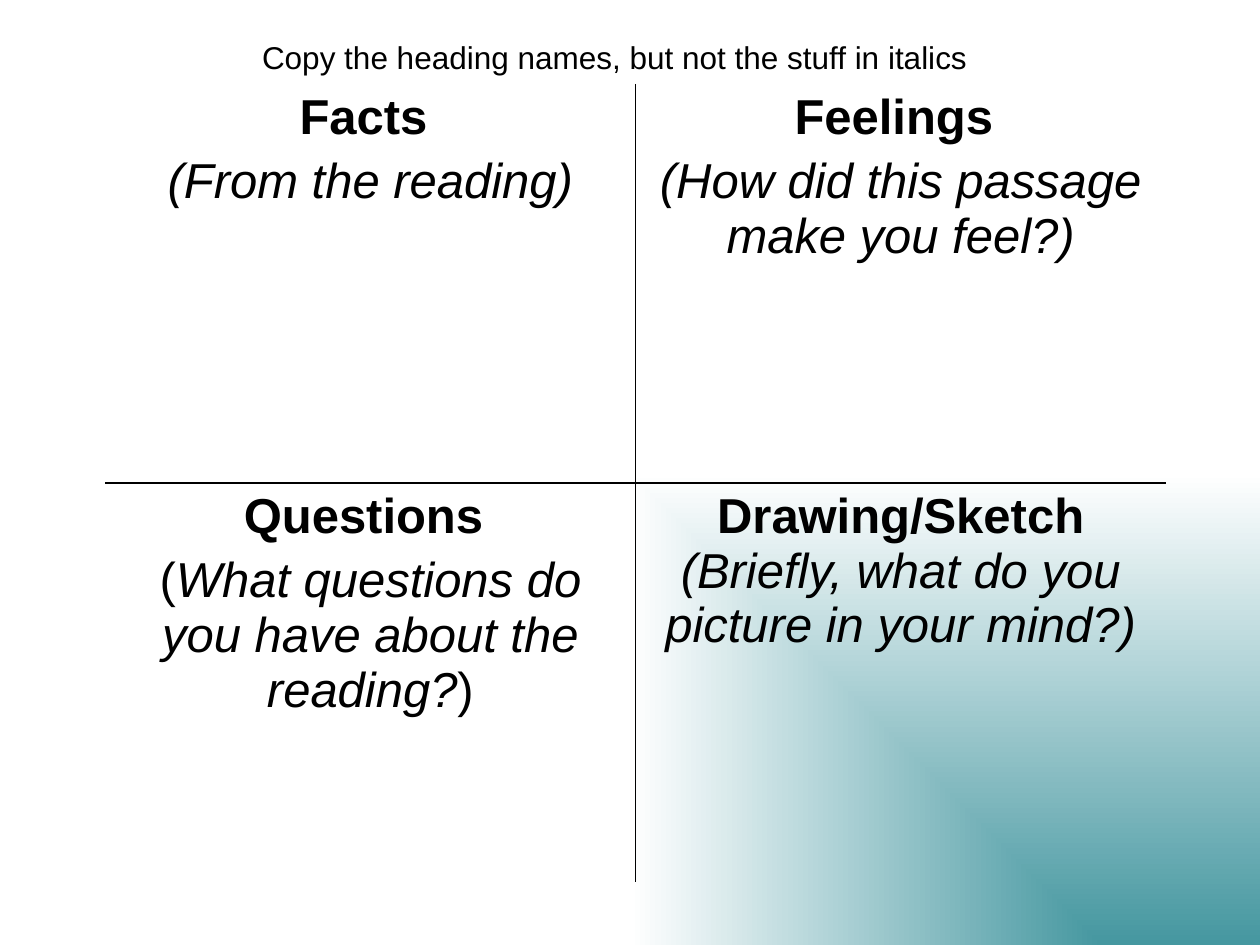
from dataclasses import dataclass

from lxml import etree
from pptx import Presentation
from pptx import util as u
from pptx.dml.color import RGBColor
from pptx.enum import text
from pptx.oxml import ns


@dataclass(frozen=True)
class Theme:
    font: str = "Arial"
    ink: str = "000000"
    teal: str = "4597A0"
    paper: str = "FFFFFF"
    caption_size: int = 18
    cell_size: int = 28
    rule_width: int = 1


THEME = Theme()
HEADING, PLAIN, HINT = {"bold": True}, {}, {"italic": True}

# Rows of cells; a cell is a list of paragraphs, a paragraph a list of runs
QUADRANTS = [
    [
        [[("Facts ", HEADING)], [("(From the reading)", HINT)]],
        [[("Feelings ", HEADING)],
         [("(How did this passage make you feel?)", HINT)]],
    ],
    [
        [[("Questions ", HEADING)],
         [("(", PLAIN),
          ("What questions do you have about the reading?", HINT),
          (")", PLAIN)]],
        [[("Drawing/Sketch ", HEADING),
          ("(Briefly, what do you picture in your mind?)", HINT)]],
    ],
]


def add_child(parent, tag, **attributes):
    return etree.SubElement(parent, ns.qn(tag), **attributes)


def write_paragraph(paragraph, runs, size, space_before):
    """Centre the runs, with space before as a percentage of the line."""
    paragraph.alignment = text.PP_ALIGN.CENTER
    spacing = add_child(paragraph._p.get_or_add_pPr(), "a:spcBef")
    add_child(spacing, "a:spcPct", val=str(space_before * 1000))
    for words, style in runs:
        run = paragraph.add_run()
        run.text = words
        font_format = {"name": THEME.font, "size": u.Pt(size),
                       "bold": False, "italic": False, **style}
        for name, value in font_format.items():
            setattr(run.font, name, value)
        run.font.color.rgb = RGBColor.from_string(THEME.ink)


def paint_background(slide):
    """Fade from teal in the bottom right corner to white."""
    fill = slide.background.fill
    fill.gradient()
    for stop, color in zip(fill.gradient_stops, (THEME.teal, THEME.paper)):
        stop.color.rgb = RGBColor.from_string(color)
    gradient = slide.background._cSld.find(".//" + ns.qn("a:gradFill"))
    for linear in gradient.findall(ns.qn("a:lin")):
        gradient.remove(linear)
    corner = add_child(gradient, "a:path", path="rect")
    add_child(corner, "a:fillToRect", l="100000", t="100000")


def rule_cell(cell, ruled_sides):
    """Draw the ruled sides of a cell and clear the others."""
    properties = cell._tc.get_or_add_tcPr()
    for side in "LRTB":
        border = add_child(properties, f"a:ln{side}",
                           w=str(u.Pt(THEME.rule_width)))
        if side in ruled_sides:
            ink = add_child(border, "a:solidFill")
            add_child(ink, "a:srgbClr", val=THEME.ink)
        else:
            add_child(border, "a:noFill")
    cell.fill.background()


def add_quadrants(slide, left, top, width, height):
    """Four equal cells, ruled only where they meet."""
    row_count, column_count = len(QUADRANTS), len(QUADRANTS[0])
    grid = slide.shapes.add_table(row_count, column_count,
                                  left, top, width, height).table
    grid.first_row = grid.horz_banding = False
    for r, row in enumerate(QUADRANTS):
        for c, paragraphs in enumerate(row):
            cell = grid.cell(r, c)
            rule_cell(cell, ("R" if c == 0 else "L") + ("B" if r == 0 else "T"))
            frame = cell.text_frame
            for i, runs in enumerate(paragraphs):
                paragraph = frame.add_paragraph() if i else frame.paragraphs[0]
                write_paragraph(paragraph, runs, THEME.cell_size, 20)


def add_caption(slide, left, top, width, height):
    frame = slide.shapes.add_textbox(left, top, width, height).text_frame
    frame.word_wrap = True
    frame.auto_size = text.MSO_AUTO_SIZE.SHAPE_TO_FIT_TEXT
    instruction = "Copy the heading names, but not the stuff in italics"
    write_paragraph(frame.paragraphs[0], [(instruction, PLAIN)],
                    THEME.caption_size, 50)


def main():
    deck = Presentation()
    deck.slide_width, deck.slide_height = u.Cm(25.4), u.Cm(19.05)
    slide = deck.slides.add_slide(deck.slide_layouts[6])
    paint_background(slide)
    add_quadrants(slide, u.Cm(2.12), u.Cm(1.69), u.Cm(21.38), u.Cm(16.09))
    add_caption(slide, u.Cm(3.18), u.Cm(0.64), u.Cm(18.42), u.Cm(1.02))
    deck.save("out.pptx")


if __name__ == "__main__":
    main()
